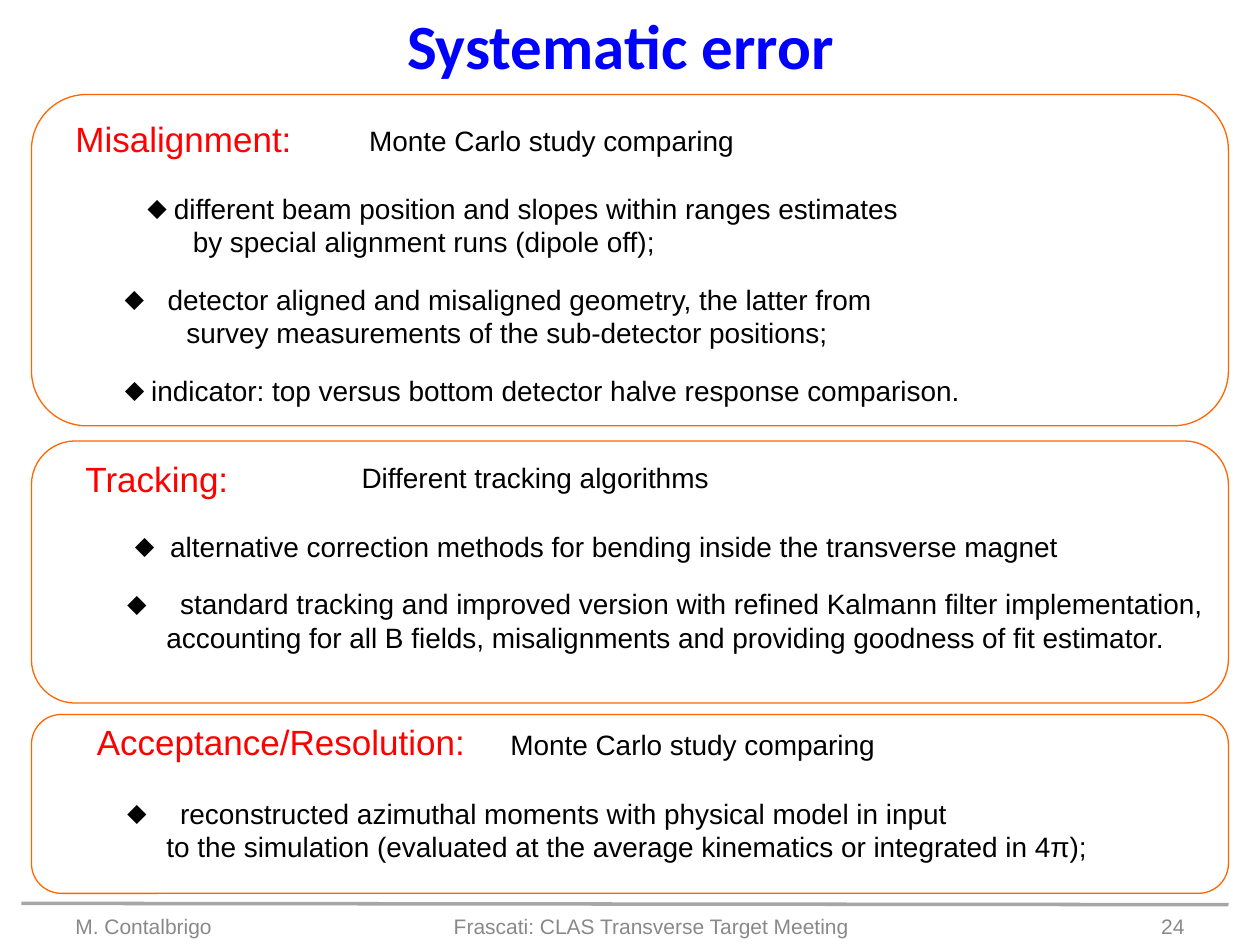
"""Build the slide on systematic errors: three framed topics with lists."""
from lxml import etree
from pptx import Presentation
from pptx.dml.color import RGBColor
from pptx.enum import shapes, text
from pptx.oxml import ns
from pptx.util import Inches, Pt

BLUE = RGBColor(0x00, 0x00, 0xFF)
RED = RGBColor(0xFF, 0x00, 0x00)
BLACK = RGBColor(0x00, 0x00, 0x00)
ORANGE = RGBColor(0xFF, 0x66, 0x00)
GREY = RGBColor(0x89, 0x89, 0x89)
SILVER = RGBColor(0xA6, 0xA6, 0xA6)
LEFT = 0.75


def write(para, words, size, color, font="Arial", bold=False):
    run = para.add_run()
    run.text = words
    run.font.name, run.font.size, run.font.bold = font, Pt(size), bold
    run.font.color.rgb = color


def setup(shape, box, wrap=True, anchor=text.MSO_ANCHOR.TOP):
    shape.left, shape.top, shape.width, shape.height = map(Inches, box)
    frame = shape.text_frame
    frame.word_wrap = wrap
    frame.auto_size = text.MSO_AUTO_SIZE.NONE
    frame.vertical_anchor = anchor
    return frame


deck = Presentation()
deck.slide_width, deck.slide_height = Inches(10), Inches(7.5)
slide = deck.slides.add_slide(deck.slide_layouts[4])
holders = slide.placeholders

frame = setup(slide.shapes.title, (3.11, 0, 3.63, 0.71), False)
frame.paragraphs[0].alignment = text.PP_ALIGN.CENTER
write(frame.paragraphs[0], "Systematic error", 36, BLUE, "Calibri", True)

topics = [
    ("Misalignment:", (0.5, 0.88, 1.93, 0.44), (0.75, 2.63), (0.98, 2.35), [
        (None, 2.93, 0, "Monte Carlo study comparing"),
        (1.17, 1.38, 20, "different beam position and slopes within ranges estimates"),
        (None, 1.53, 0, "by special alignment runs (dipole off);"),
        (0.99, 1.33, 14, "detector aligned and misaligned geometry, the latter from"),
        (None, 1.48, 0, "survey measurements of the sub-detector positions;"),
        (0.99, 1.2, 14, "indicator: top versus bottom detector halve response comparison."),
    ]),
    ("Tracking:", (0.58, 3.58, 1.35, 0.44), (3.5, 2.08), (3.66, 1.6), [
        (None, 2.87, 0, "Different tracking algorithms"),
        (1.07, 1.35, 20, "alternative correction methods for bending inside the transverse magnet"),
        (1.01, 1.43, 14, "standard tracking and improved version with refined Kalmann filter implementation,"),
        (None, 1.32, 0, "accounting for all B fields, misalignments and providing goodness of fit estimator."),
    ]),
    ("Acceptance/Resolution:", (0.67, 5.67, 3.16, 0.44), (5.67, 1.42), (5.78, 1.15), [
        (None, 4.05, 0, "Monte Carlo study comparing"),
        (1.01, 1.43, 20, "reconstructed azimuthal moments with physical model in input"),
        (None, 1.32, 0, "to the simulation (evaluated at the average kinematics or integrated in 4π);"),
    ]),
]

for idx, (head, spot, edge, area, lines) in enumerate(topics, 1):
    frame = setup(holders[idx], (LEFT, area[0], 9, area[1]))
    frame.margin_left = frame.margin_right = 0
    frame.margin_top = frame.margin_bottom = 0
    for num, (mark, start, gap, words) in enumerate(lines):
        para = frame.add_paragraph() if num else frame.paragraphs[0]
        para.line_spacing, para.space_before = Pt(19), Pt(gap)
        props = para._p.get_or_add_pPr()
        props.set("marL", str(Inches(start - LEFT)))
        props.set("indent", str(Inches(mark - start) if mark else 0))
        if mark:
            etree.SubElement(props, ns.qn("a:buChar")).set("char", "⬥")
        else:
            etree.SubElement(props, ns.qn("a:buNone"))
        write(para, words, 16, BLACK)

    label = setup(slide.shapes.add_textbox(0, 0, 0, 0), spot, False)
    write(label.paragraphs[0], head, 20, RED)

    panel = slide.shapes.add_shape(
        shapes.MSO_SHAPE.ROUNDED_RECTANGLE,
        Inches(0.25), Inches(edge[0]), Inches(9.5), Inches(edge[1]))
    panel.shadow.inherit = False
    panel.fill.background()
    panel.line.color.rgb, panel.line.width = ORANGE, Pt(0.75)

spare = holders[4].element
spare.getparent().remove(spare)

rule = slide.shapes.add_connector(
    shapes.MSO_CONNECTOR.STRAIGHT,
    Inches(0.17), Inches(7.17), Inches(9.75), Inches(7.18))
rule.line.color.rgb, rule.line.width = SILVER, Pt(2)
etree.SubElement(rule.element.spPr, ns.qn("a:effectLst"))

for words, left, width, align in [
    ("M. Contalbrigo", 0.5, 2.33, text.PP_ALIGN.LEFT),
    ("Frascati: CLAS Transverse Target Meeting", 3.42, 3.5, text.PP_ALIGN.CENTER),
    ("24", 7.17, 2.33, text.PP_ALIGN.RIGHT),
]:
    foot = setup(slide.shapes.add_textbox(0, 0, 0, 0),
                 (left, 7.1, width, 0.4), True, text.MSO_ANCHOR.BOTTOM)
    foot.paragraphs[0].alignment = align
    write(foot.paragraphs[0], words, 12, GREY)

deck.save("out.pptx")
